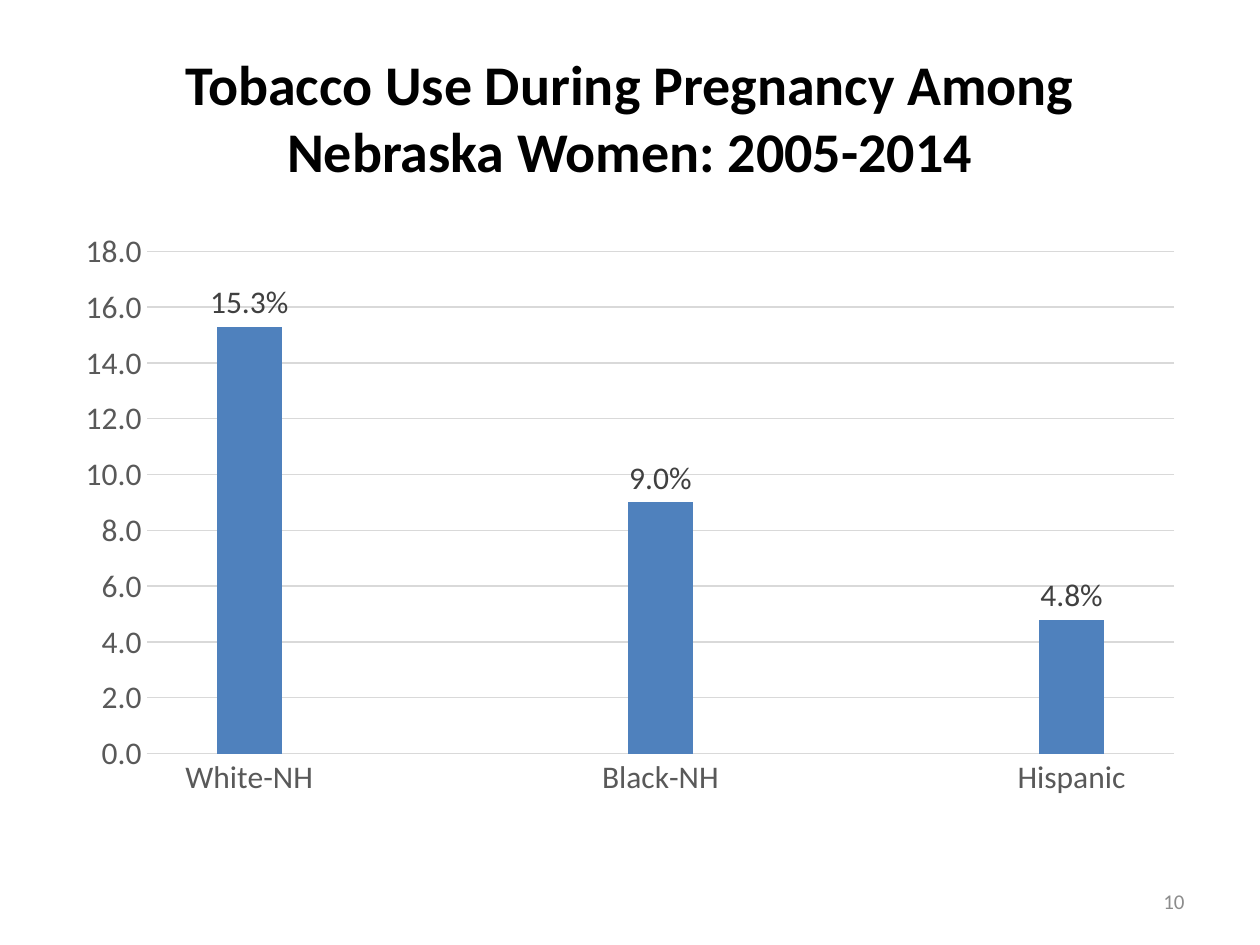
from dataclasses import dataclass

import pptx
import pptx.chart.data
import pptx.dml.color
import pptx.enum.chart
import pptx.enum.text
import pptx.util

Pt = pptx.util.Pt
Align = pptx.enum.text.PP_ALIGN
FONT = "Calibri"
AXIS_TEXT = "595959"
RULE = "D9D9D9"


@dataclass(frozen=True)
class Caption:
    text: str
    left: float
    top: float
    width: float
    height: float
    size: float
    color: str
    align: Align
    bold: bool = False


@dataclass(frozen=True)
class Group:
    name: str
    percent: float | None


CAPTIONS = [
    Caption("Tobacco Use During Pregnancy Among Nebraska Women: 2005-2014",
            36, 21.6, 648, 90, 32, "000000", Align.CENTER, True),
    Caption("10", 516, 500.5, 168, 28.75, 12, "8C8C8C", Align.RIGHT),
]
SPACER = Group("", None)
GROUPS = [
    Group("White-NH", 15.3),
    SPACER,
    Group("Black-NH", 9.0),
    SPACER,
    Group("Hispanic", 4.8),
]


def rgb(value: str) -> pptx.dml.color.RGBColor:
    return pptx.dml.color.RGBColor.from_string(value)


def style_font(font, size: float, color: str, bold: bool = False) -> None:
    font.name = FONT
    font.size = Pt(size)
    font.bold = bold
    font.color.rgb = rgb(color)


def style_line(line, color: str) -> None:
    line.color.rgb = rgb(color)
    line.width = Pt(0.75)


def draw_caption(slide, caption: Caption) -> None:
    frame = slide.shapes.add_textbox(
        Pt(caption.left), Pt(caption.top), Pt(caption.width), Pt(caption.height)
    ).text_frame
    frame.word_wrap = True
    frame.vertical_anchor = pptx.enum.text.MSO_ANCHOR.MIDDLE
    paragraph = frame.paragraphs[0]
    paragraph.alignment = caption.align
    run = paragraph.add_run()
    run.text = caption.text
    style_font(run.font, caption.size, caption.color, caption.bold)


def draw_tobacco_chart(slide, groups: list[Group]) -> None:
    rates = pptx.chart.data.CategoryChartData(number_format="0.0")
    rates.categories = [group.name for group in groups]
    rates.add_series("Series 1", [group.percent for group in groups])
    chart = slide.shapes.add_chart(
        pptx.enum.chart.XL_CHART_TYPE.COLUMN_CLUSTERED,
        Pt(36), Pt(126), Pt(648), Pt(336), rates,
    ).chart
    chart.has_legend = False
    chart.has_title = False
    style_font(chart.font, 18, "000000")

    for axis in (chart.category_axis, chart.value_axis):
        axis.major_tick_mark = pptx.enum.chart.XL_TICK_MARK.NONE
        axis.minor_tick_mark = pptx.enum.chart.XL_TICK_MARK.NONE
        style_font(axis.tick_labels.font, 18, AXIS_TEXT)
    style_line(chart.category_axis.format.line, RULE)

    percent_axis = chart.value_axis
    percent_axis.minimum_scale = 0
    percent_axis.maximum_scale = 18
    percent_axis.major_unit = 2
    percent_axis.format.line.fill.background()
    percent_axis.has_major_gridlines = True
    style_line(percent_axis.major_gridlines.format.line, RULE)
    percent_axis.tick_labels.number_format = "0.0"
    percent_axis.tick_labels.number_format_is_linked = False

    columns = chart.plots[0]
    columns.gap_width = 219
    columns.overlap = -27
    columns.vary_by_categories = False
    rate_series = columns.series[0]
    rate_series.invert_if_negative = False
    rate_series.format.fill.solid()
    rate_series.format.fill.fore_color.rgb = rgb("4F81BD")

    rate_labels = rate_series.data_labels
    rate_labels.show_value = True
    rate_labels.position = pptx.enum.chart.XL_LABEL_POSITION.OUTSIDE_END
    rate_labels.number_format = '0.0"%"'
    rate_labels.number_format_is_linked = False
    style_font(rate_labels.font, 18, "404040")


def main() -> None:
    deck = pptx.Presentation()
    deck.slide_width = Pt(720)
    deck.slide_height = Pt(540)
    slide = deck.slides.add_slide(deck.slide_layouts[6])
    for caption in CAPTIONS:
        draw_caption(slide, caption)
    draw_tobacco_chart(slide, GROUPS)
    deck.save("out.pptx")


if __name__ == "__main__":
    main()
